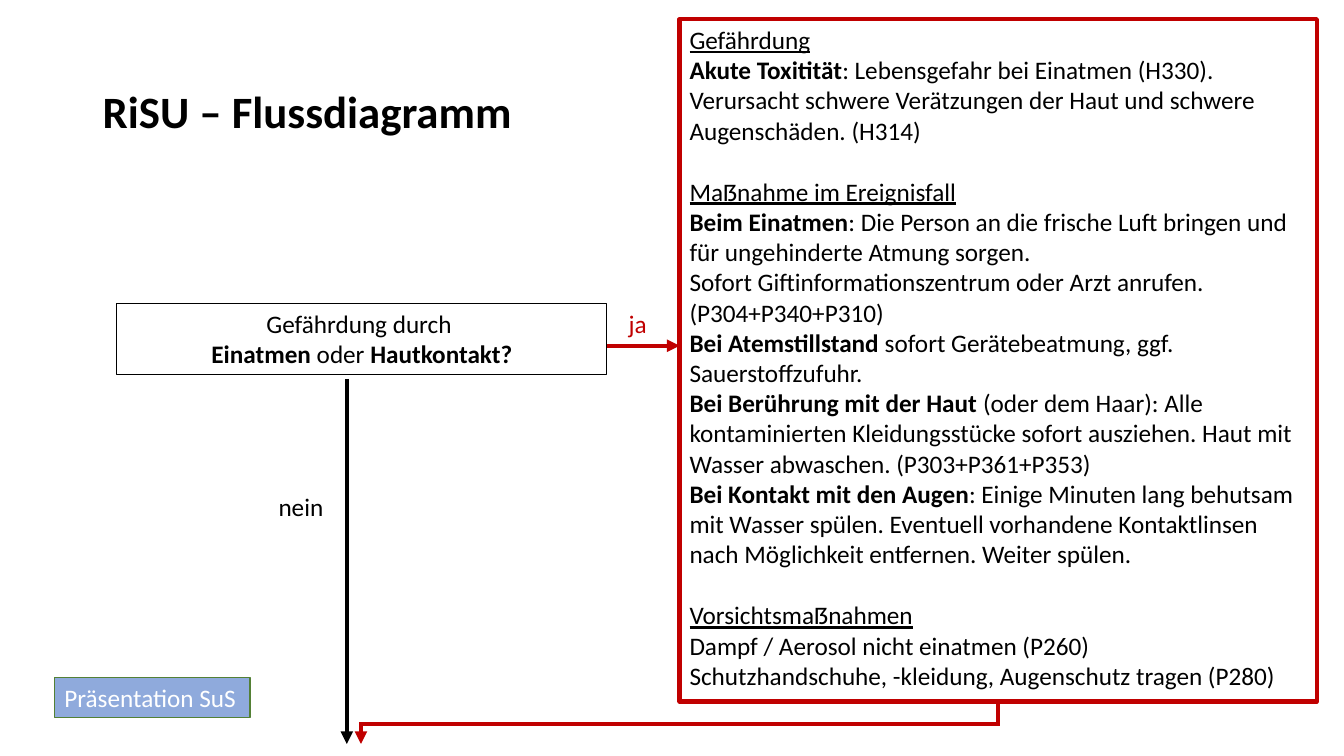
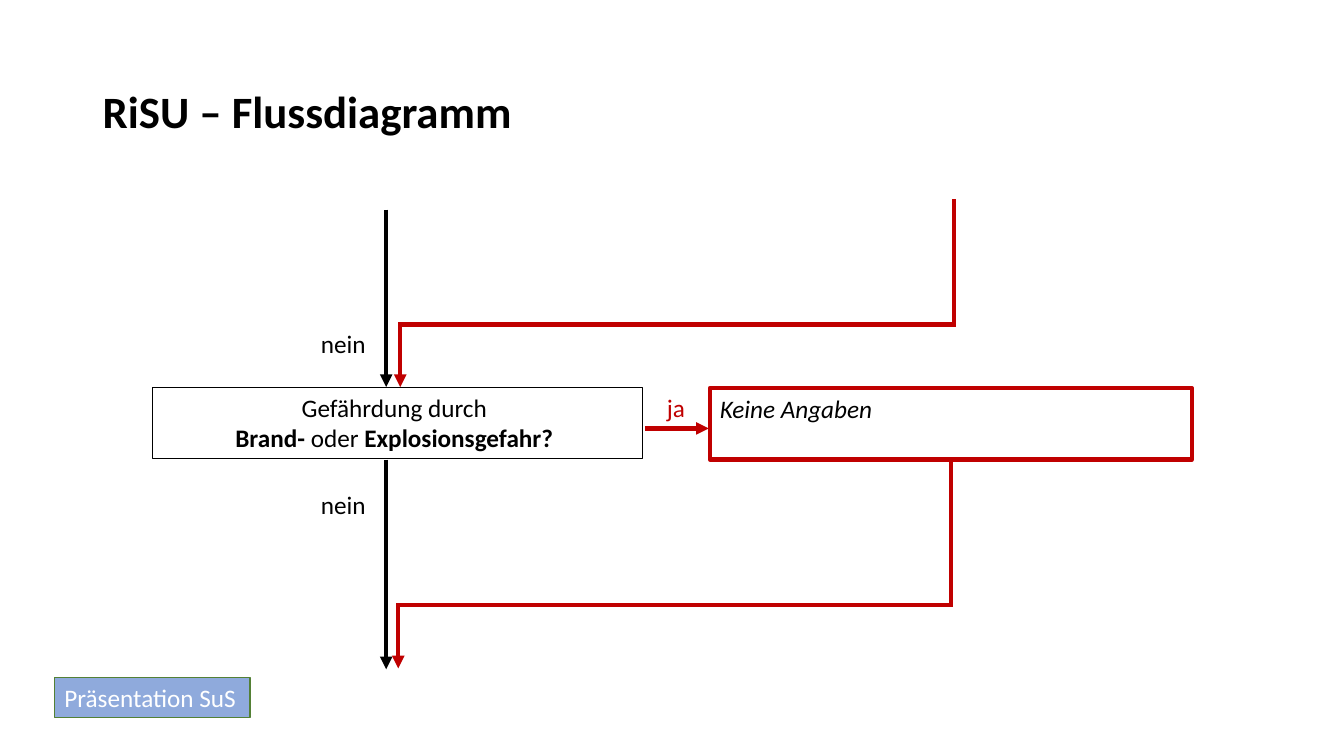
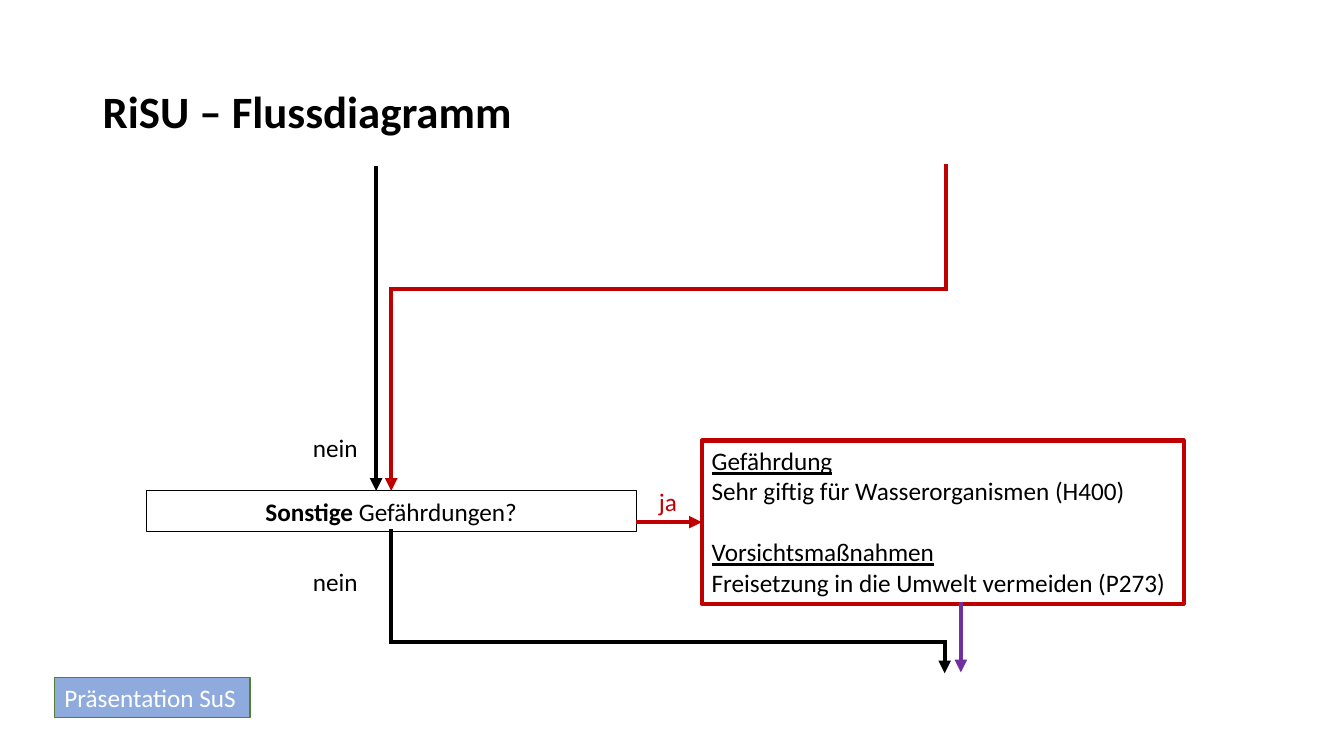
"""Build the three RiSU flow chart slides."""
from dataclasses import dataclass

from lxml import etree
from pptx import Presentation
from pptx.dml.color import RGBColor
from pptx.enum.shapes import MSO_CONNECTOR, MSO_SHAPE
from pptx.enum.text import MSO_ANCHOR, PP_ALIGN
from pptx.oxml.ns import qn
from pptx.util import Inches, Pt

RECT = MSO_SHAPE.RECTANGLE
STRAIGHT = MSO_CONNECTOR.STRAIGHT
TOP, MIDDLE = MSO_ANCHOR.TOP, MSO_ANCHOR.MIDDLE
LEFT, CENTER = PP_ALIGN.LEFT, PP_ALIGN.CENTER
SITE_TOP, SITE_LEFT, SITE_BOTTOM = 0, 1, 2


@dataclass(frozen=True)
class Theme:
    """Colours, font and sizes shared by all slides."""
    black: RGBColor = RGBColor(0x00, 0x00, 0x00)
    white: RGBColor = RGBColor(0xFF, 0xFF, 0xFF)
    red: RGBColor = RGBColor(0xC0, 0x00, 0x00)
    purple: RGBColor = RGBColor(0x70, 0x30, 0xA0)
    tag_fill: RGBColor = RGBColor(0x8F, 0xAA, 0xDC)
    tag_line: RGBColor = RGBColor(0x53, 0x80, 0x35)
    font: str = "Calibri"
    title_size: int = 32
    body_size: int = 18
    section_gap: int = 22
    thin: float = 0.75
    tag_width: float = 1
    thick: float = 3


class Deck:
    """Holds the theme, the presentation and the current slide."""

    def __init__(self, theme):
        """Start an empty widescreen presentation."""
        self.t = theme
        self.prs = Presentation()
        self.prs.slide_width = Inches(13.33)
        self.prs.slide_height = Inches(7.5)

    def slide(self):
        """Add a slide with the shared title and tag."""
        self.s = self.prs.slides.add_slide(self.prs.slide_layouts[6])
        t = self.t
        tf = self.textbox(0.92, 0.4, 4.54, 1.46)
        tf.vertical_anchor = MIDDLE
        self.add_text(tf, [[("RiSU – Flussdiagramm", "b")]], t.black, LEFT, t.title_size)
        tf.paragraphs[0].line_spacing = 0.9
        self.box((0.54, 6.72, 1.94, 0.4), [[("Präsentation SuS", "")]],
                 t.tag_line, t.tag_width, LEFT, t.white, t.tag_fill)

    def textbox(self, x, y, w, h):
        """Add a wrapping text box and return its text frame."""
        sp = self.s.shapes.add_textbox(Inches(x), Inches(y), Inches(w), Inches(h))
        sp.text_frame.word_wrap = True
        return sp.text_frame

    def add_text(self, tf, paragraphs, color, align, size):
        """Add paragraphs of (text, style) runs, styles being b, i and u."""
        for n, runs in enumerate(paragraphs):
            p = tf.add_paragraph() if n else tf.paragraphs[0]
            p.alignment = align
            if n and runs[0][1] == "u":
                p.space_before = Pt(self.t.section_gap)
            for text, style in runs:
                for k, part in enumerate(text.split("\n")):
                    if k:
                        p.add_line_break()
                    if part:
                        r = p.add_run()
                        r.text = part
                        r.font.name = self.t.font
                        r.font.size = Pt(size)
                        r.font.color.rgb = color
                        r.font.bold = "b" in style
                        r.font.italic = "i" in style
                        r.font.underline = "u" in style

    def box(self, at, paragraphs, line, width, align, color, fill=None):
        """Add an outlined rectangle with text."""
        sp = self.s.shapes.add_shape(RECT, *(Inches(v) for v in at))
        sp.shadow.inherit = False
        if fill is None:
            sp.fill.background()
        else:
            sp.fill.solid()
            sp.fill.fore_color.rgb = fill
        sp.line.color.rgb = line
        sp.line.width = Pt(width)
        tf = sp.text_frame
        tf.word_wrap = True
        tf.vertical_anchor = TOP
        self.add_text(tf, paragraphs, color, align, self.t.body_size)
        return sp

    def question(self, x, y, h, runs):
        """Add a centred question box."""
        t = self.t
        return self.box((x, y, 4.86, h), [runs], t.black, t.thin, CENTER, t.black)

    def answer(self, at, paragraphs):
        """Add a red answer box."""
        t = self.t
        return self.box(at, paragraphs, t.red, t.thick, LEFT, t.black)

    def label(self, x, y, text):
        """Add a branch label, red for yes and black for no."""
        tf = self.textbox(x, y, 0.53, 0.3)
        tf.margin_left = tf.margin_right = tf.margin_top = tf.margin_bottom = 0
        color = self.t.red if text == "ja" else self.t.black
        self.add_text(tf, [[(text, "")]], color, CENTER, self.t.body_size)

    def route(self, points, color, begin=None, end=None):
        """Draw straight segments through points, with an arrowhead at the end."""
        last = len(points) - 2
        for n, (a, b) in enumerate(zip(points, points[1:])):
            c = self.s.shapes.add_connector(STRAIGHT, *(Inches(v) for v in a + b))
            c.line.color.rgb = color
            c.line.width = Pt(self.t.thick)
            sp_pr = c._element.spPr
            ln = sp_pr.find(qn("a:ln"))
            if n == last:
                etree.SubElement(ln, qn("a:tailEnd")).set("type", "triangle")
            else:
                ln.set("cap", "sq")
            etree.SubElement(sp_pr, qn("a:effectLst"))
            if begin and n == 0:
                c.begin_connect(*begin)
            if end and n == last:
                c.end_connect(*end)


def contact_slide(d):
    """Build the slide on inhalation and skin contact."""
    t = d.t
    d.slide()
    answer = d.answer((6.74, 0.19, 6.32, 6.77), [
        [("Gefährdung", "u")],
        [("Akute Toxitität", "b"), (": Lebensgefahr bei Einatmen (H330).", "")],
        [("Verursacht schwere Verätzungen der Haut und schwere Augenschäden. (H314)", "")],
        [("Maẞnahme im Ereignisfall", "u")],
        [("Beim Einatmen", "b"),
         (": Die Person an die frische Luft bringen und für ungehinderte Atmung sorgen.\n"
          "Sofort Giftinformationszentrum oder Arzt anrufen. (P304+P340+P310)", "")],
        [("Bei Atemstillstand ", "b"),
         ("sofort Gerätebeatmung, ggf. Sauerstoffzufuhr.", "")],
        [("Bei Berührung mit der Haut ", "b"),
         ("(oder dem Haar): Alle kontaminierten Kleidungsstücke sofort ausziehen. "
          "Haut mit Wasser abwaschen. (P303+P361+P353)", "")],
        [("Bei Kontakt mit den Augen", "b"),
         (": Einige Minuten lang behutsam mit Wasser spülen. Eventuell vorhandene "
          "Kontaktlinsen nach Möglichkeit entfernen. Weiter spülen.", "")],
        [("Vorsichtsmaẞnahmen", "u")],
        [("Dampf / Aerosol nicht einatmen (P260)", "")],
        [("Schutzhandschuhe, -kleidung, Augenschutz tragen (P280)", "")],
    ])
    d.question(1.16, 3.01, 0.71, [
        ("Gefährdung durch \n", ""), ("Einatmen", "b"), (" oder ", ""),
        ("Hautkontakt?", "b")])
    d.label(6.06, 3.06, "ja")
    d.label(2.72, 4.87, "nein")
    d.route([(3.44, 3.76), (3.44, 7.38)], t.black)
    d.route([(6.02, 3.43), (6.74, 3.43)], t.red)
    d.route([(9.9, 6.96), (9.9, 7.18), (3.58, 7.18), (3.58, 7.38)], t.red,
            begin=(answer, SITE_BOTTOM))


def fire_slide(d):
    """Build the slide on fire and explosion."""
    t = d.t
    d.slide()
    d.question(1.51, 3.84, 0.71, [
        ("Gefährdung durch \n", ""), ("Brand-", "b"), (" oder ", ""),
        ("Explosionsgefahr? ", "b")])
    answer = d.answer((7.04, 3.85, 4.78, 0.71), [[("Keine Angaben", "i")]])
    d.label(6.44, 3.89, "ja")
    for y in (3.26, 4.85):
        d.label(3.14, y, "nein")
    d.route([(3.83, 2.08), (3.83, 3.84)], t.black)
    d.route([(3.83, 4.56), (3.83, 6.64)], t.black)
    d.route([(6.4, 4.25), (7.03, 4.25)], t.red)
    d.route([(9.46, 2), (9.46, 3.22), (3.97, 3.22), (3.97, 3.84)], t.red)
    d.route([(9.43, 4.56), (9.43, 6), (3.95, 6), (3.95, 6.63)], t.red,
            begin=(answer, SITE_BOTTOM))


def other_slide(d):
    """Build the slide on other hazards."""
    t = d.t
    d.slide()
    question = d.question(1.45, 4.87, 0.4, [("Sonstige ", "b"), ("Gefährdungen?", "")])
    answer = d.answer((6.96, 4.37, 4.78, 1.62), [
        [("Gefährdung", "u")],
        [("Sehr giftig für Wasserorganismen (H400)", "")],
        [("Vorsichtsmaßnahmen", "u")],
        [("Freisetzung in die Umwelt vermeiden (P273)", "")],
    ])
    d.label(6.36, 4.82, "ja")
    for y in (4.29, 5.62):
        d.label(3.06, y, "nein")
    d.route([(3.73, 1.65), (3.73, 4.87)], t.black)
    d.route([(6.31, 5.18), (6.96, 5.18)], t.red, end=(answer, SITE_LEFT))
    d.route([(9.38, 1.65), (9.38, 2.87), (3.88, 2.87), (3.88, 4.87)], t.red,
            end=(question, SITE_TOP))
    d.route([(9.53, 5.97), (9.53, 6.67)], t.purple)
    d.route([(3.88, 5.27), (3.88, 6.37), (9.37, 6.37), (9.37, 6.68)], t.black,
            begin=(question, SITE_BOTTOM))


def main():
    """Build and save the deck."""
    d = Deck(Theme())
    contact_slide(d)
    fire_slide(d)
    other_slide(d)
    d.prs.save("out.pptx")


if __name__ == "__main__":
    main()
